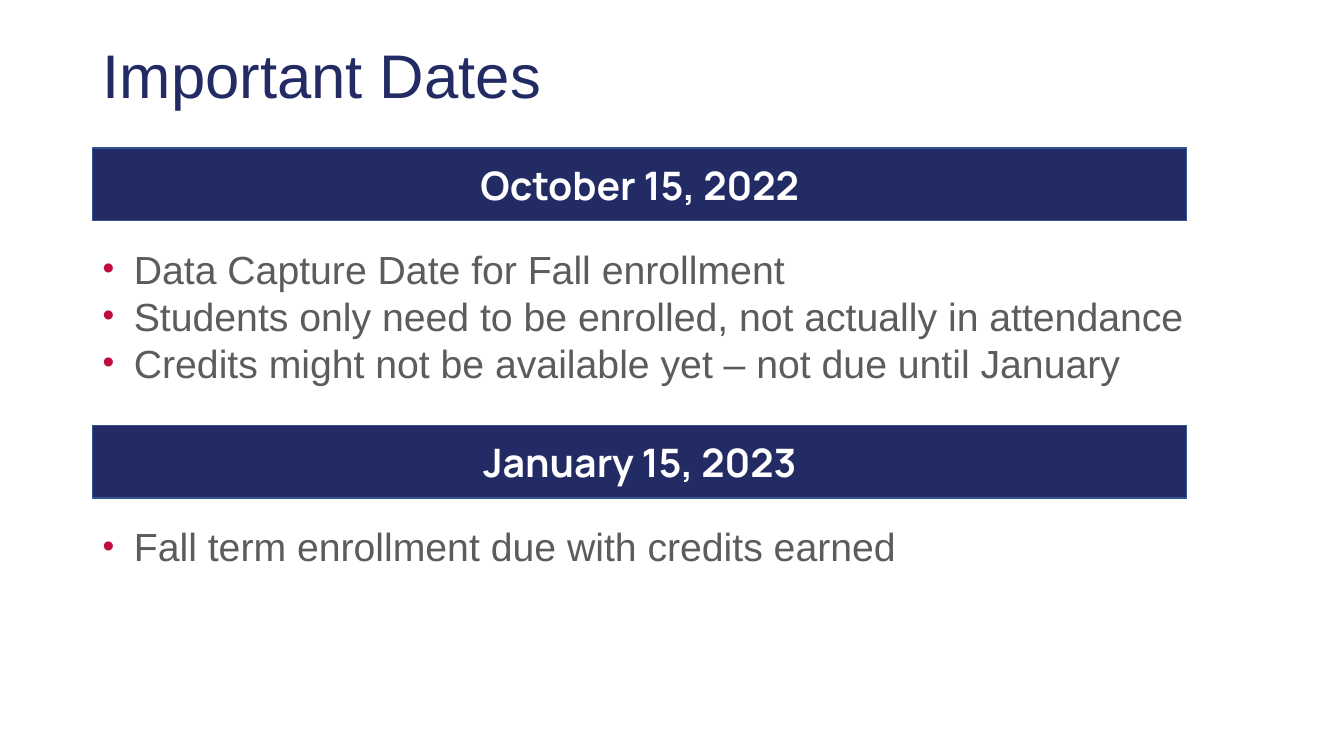
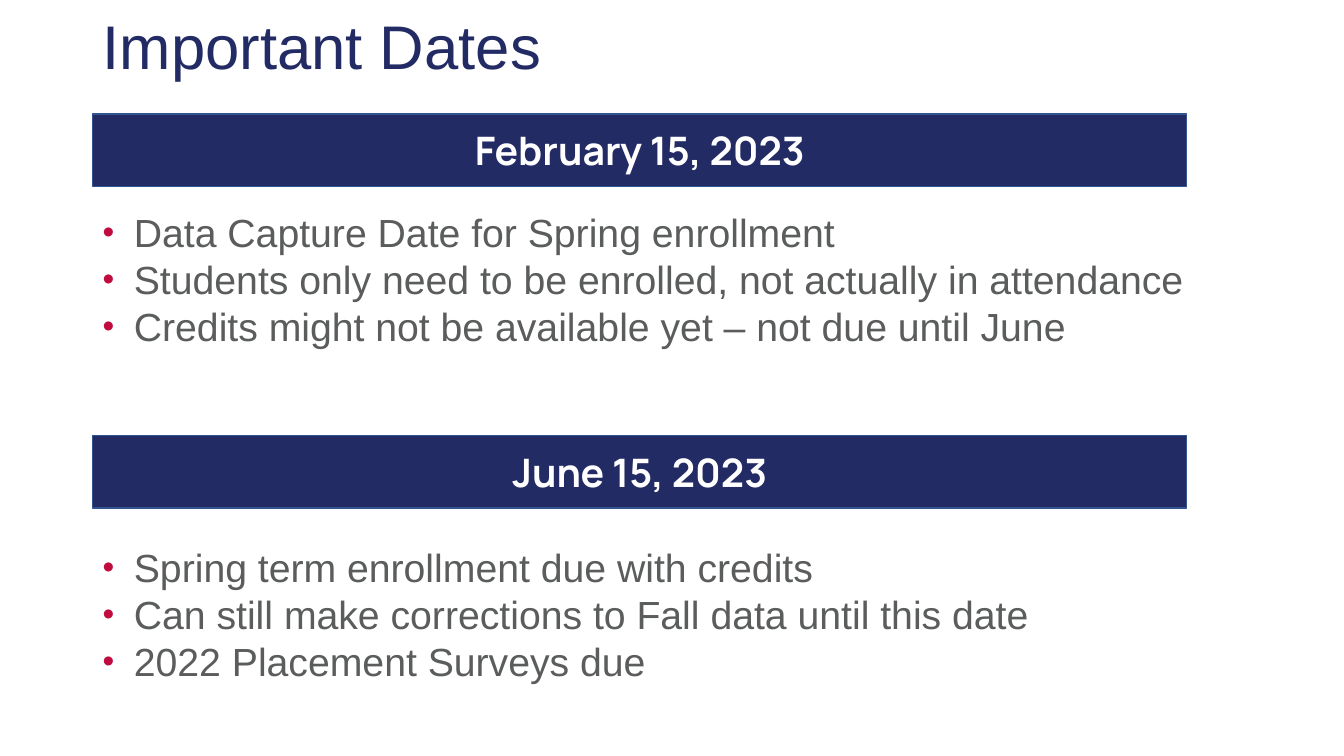
from lxml import etree
from pptx import Presentation, util as u
from pptx.dml.color import RGBColor
from pptx.enum import shapes, text
from pptx.oxml.ns import qn

# Content: each section is (band top, date, list top, list items)
SLIDES = [
    {"title": "Important Dates", "title_top": 0.4, "sections": [
        (1.47, "October 15, 2022", 2.38, [
            "Data Capture Date for Fall enrollment",
            "Students only need to be enrolled, not actually in attendance",
            "Credits might not be available yet – not due until January"]),
        (4.22, "January 15, 2023", 5.13, [
            "Fall term enrollment due with credits earned"]),
    ]},
    {"title": "Important Dates", "title_top": 0.11, "sections": [
        (1.13, "February 15, 2023", 2.02, [
            "Data Capture Date for Spring enrollment",
            "Students only need to be enrolled, not actually in attendance",
            "Credits might not be available yet – not due until June"]),
        (4.32, "June 15, 2023", 5.34, [
            "Spring term enrollment due with credits",
            "Can still make corrections to Fall data until this date",
            "2022 Placement Surveys due"]),
    ]},
]

# Shared style
COLORS = {"navy": "232B64", "edge": "325491", "gray": "5A5D5C",
          "bullet": "BF0B3E", "white": "FFFFFF"}
LEFT = 0.92
TITLE_SIZE = (11.5, 1.45)
BAND_SIZE = (10.85, 0.72)
LIST_WIDTH, LINE_HEIGHT, LIST_PADDING = 11.14, 0.47, 0.1
INDENT = u.Inches(0.31)


def color(name):
    return RGBColor.from_string(COLORS[name])


def box(top, width, height):
    return [u.Inches(value) for value in (LEFT, top, width, height)]


def style(paragraph, font_name, size, color_name, bold=False):
    for run in paragraph.runs:
        run.font.name, run.font.size = font_name, u.Pt(size)
        run.font.bold = bold
        run.font.color.rgb = color(color_name)


def add_bullet(paragraph):
    properties = paragraph._p.get_or_add_pPr()
    properties.set("marL", str(INDENT))
    properties.set("indent", str(-INDENT))
    bullet_color = etree.SubElement(properties, qn("a:buClr"))
    etree.SubElement(bullet_color, qn("a:srgbClr"), val=COLORS["bullet"])
    etree.SubElement(properties, qn("a:buSzPct"), val="85000")
    etree.SubElement(properties, qn("a:buFont"), typeface="Arial")
    etree.SubElement(properties, qn("a:buChar"), char="•")


def set_title(slide, title, top):
    shape = slide.shapes.title
    shape.left, shape.top, shape.width, shape.height = box(top, *TITLE_SIZE)
    frame = shape.text_frame
    frame.text = title
    frame.auto_size = text.MSO_AUTO_SIZE.NONE
    frame.vertical_anchor = text.MSO_ANCHOR.TOP
    paragraph = frame.paragraphs[0]
    paragraph.alignment = text.PP_ALIGN.LEFT
    paragraph.line_spacing = 0.9
    style(paragraph, "Arial", 44, "navy")


def add_band(slide, top, date):
    band = slide.shapes.add_shape(shapes.MSO_SHAPE.RECTANGLE, *box(top, *BAND_SIZE))
    band.shadow.inherit = False
    band.fill.solid()
    band.fill.fore_color.rgb = color("navy")
    band.line.color.rgb = color("edge")
    band.line.width = u.Pt(1)
    frame = band.text_frame
    frame.text = date
    frame.vertical_anchor = text.MSO_ANCHOR.MIDDLE
    frame.paragraphs[0].alignment = text.PP_ALIGN.CENTER
    style(frame.paragraphs[0], "Manrope", 28, "white", bold=True)


def add_list(slide, top, items):
    height = len(items) * LINE_HEIGHT + LIST_PADDING
    frame = slide.shapes.add_textbox(*box(top, LIST_WIDTH, height)).text_frame
    frame.word_wrap = True
    frame.text = "\n".join(items)
    for paragraph in frame.paragraphs:
        add_bullet(paragraph)
        style(paragraph, "Arial", 28, "gray")


def main():
    presentation = Presentation()
    presentation.slide_width = u.Inches(13.33)
    presentation.slide_height = u.Inches(7.5)
    title_only = presentation.slide_layouts.get_by_name("Title Only")
    for content in SLIDES:
        slide = presentation.slides.add_slide(title_only)
        set_title(slide, content["title"], content["title_top"])
        for band_top, date, list_top, items in content["sections"]:
            add_band(slide, band_top, date)
            add_list(slide, list_top, items)
    presentation.save("out.pptx")


if __name__ == "__main__":
    main()
